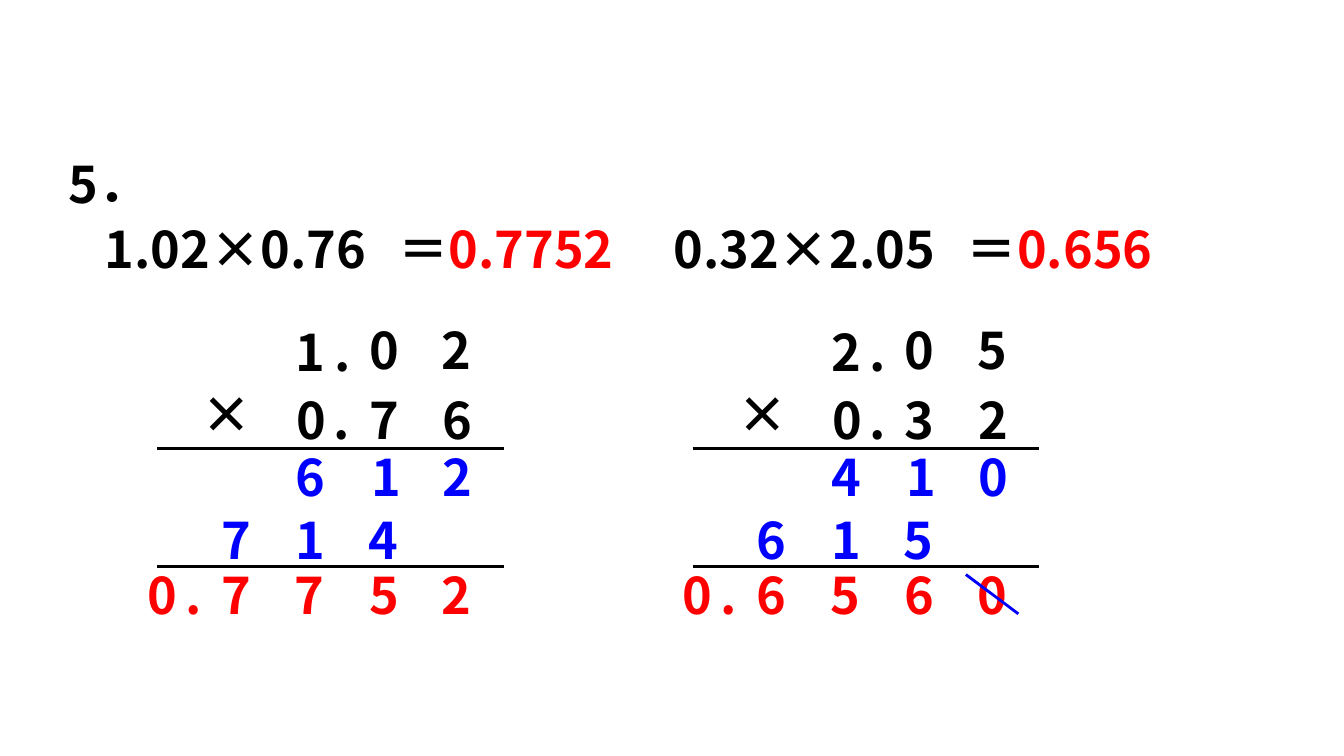
from lxml import etree
from pptx import Presentation
from pptx.dml.color import RGBColor
from pptx.enum.shapes import MSO_CONNECTOR
from pptx.enum.text import MSO_AUTO_SIZE, PP_ALIGN
from pptx.oxml.ns import qn
from pptx.util import Inches, Pt

FONT = "Noto Sans CJK SC"
COLORS = {"black": "000000", "red": "FF0000", "blue": "0000FF"}

presentation = Presentation()
presentation.slide_width = Inches(13.33)
presentation.slide_height = Inches(7.5)
slide = presentation.slides.add_slide(presentation.slide_layouts[6])


def add_text(left, top, width, height, pieces, align=PP_ALIGN.LEFT):
    """Add a bold one-line text box from (text, color name) pieces."""
    text_box = slide.shapes.add_textbox(Inches(left), Inches(top), Inches(width), Inches(height))
    text_frame = text_box.text_frame
    text_frame.word_wrap = True
    text_frame.auto_size = MSO_AUTO_SIZE.SHAPE_TO_FIT_TEXT
    paragraph = text_frame.paragraphs[0]
    paragraph.alignment = align
    for text, color in pieces:
        run = paragraph.add_run()
        run.text = text
        run.font.name = FONT
        run.font.size = Pt(36)
        run.font.bold = True
        run.font.color.rgb = RGBColor.from_string(COLORS[color])
        east_asian = etree.SubElement(run.font._element, qn("a:ea"))
        east_asian.set("typeface", FONT)


def add_line(x1, y1, x2, y2, color):
    line = slide.shapes.add_connector(
        MSO_CONNECTOR.STRAIGHT, Inches(x1), Inches(y1), Inches(x2), Inches(y2))
    line.line.color.rgb = RGBColor.from_string(COLORS[color])
    line.line.width = Pt(2)
    etree.SubElement(line._element.spPr, qn("a:effectLst"))


add_text(0.58, 1.47, 12.19, 0.71, [("5．", "black")])

# Left edges of the one-character boxes, measured in the first calculation
ROWS = [
    (3.14, "black", [2.72, 3.04]),
    (3.12, "black", [3.45, 4.17]),
    (3.75, "black", [1.89]),
    (3.81, "black", [2.73, 3.03, 3.45, 4.18]),
    (4.38, "blue", [2.72, 3.47, 4.18]),
    (5.00, "blue", [1.98, 2.72, 3.44]),
    (5.55, "red", [1.25, 1.56, 1.98, 2.71, 3.45, 4.17]),
]

# Shift of the calculation, equation left, equals left, equation, answer, row characters
CALCULATIONS = [
    (0, 0.94, 3.85, "1.02×0.76", "0.7752",
     ["1.", "02", "×", "0.76", "612", "714", "0.7752"]),
    (5.31, 6.58, 9.49, "0.32×2.05", "0.656",
     ["2.", "05", "×", "0.32", "410", "615", "0.6560"]),
]

for shift, equation_left, equals_left, equation, answer, row_texts in CALCULATIONS:
    add_text(equation_left, 2.11, 3.32, 0.71, [(equation, "black")])
    add_text(equals_left, 2.11, 2.9, 0.71, [("＝", "black"), (answer, "red")])
    for rule_top in (4.45, 5.62):
        add_line(1.56 + shift, rule_top, 5 + shift, rule_top, "black")
    for (top, color, lefts), characters in zip(ROWS, row_texts):
        for left, character in zip(lefts, characters):
            add_text(left + shift, top, 0.72, 0.7, [(character, color)], PP_ALIGN.CENTER)

# Strike through the trailing zero of the second product
add_line(9.58, 5.7, 10.1, 6.09, "blue")

presentation.save("out.pptx")
